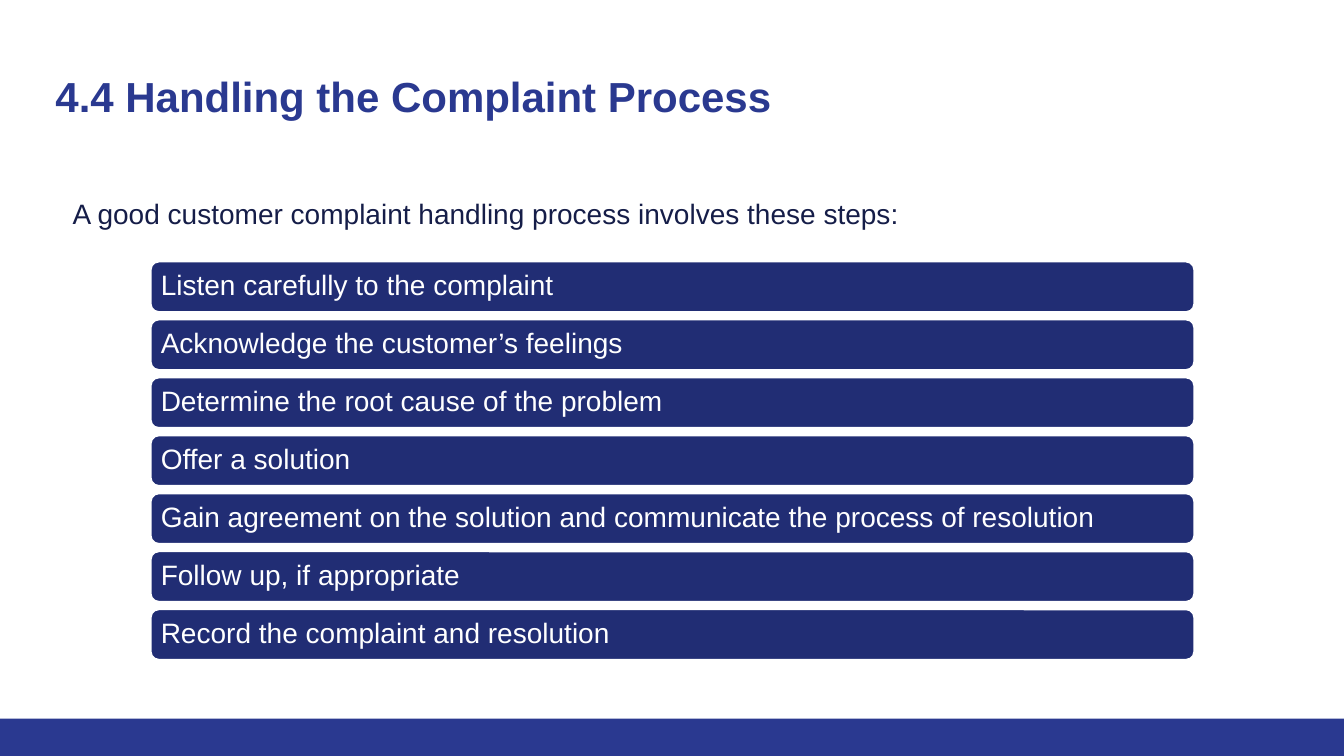
from pptx import Presentation
from pptx.dml.color import RGBColor
from pptx.enum.shapes import MSO_SHAPE as SHAPE
from pptx.enum.text import MSO_ANCHOR as ANCHOR, MSO_AUTO_SIZE as FIT, PP_ALIGN as ALIGN
from pptx.oxml.xmlchemy import OxmlElement
from pptx.util import Inches, Pt

TITLE = "4.4 Handling the Complaint Process"
INTRO = "A good customer complaint handling process involves these steps:"
STEPS = [
    "Listen carefully to the complaint",
    "Acknowledge the customer’s feelings",
    "Determine the root cause of the problem",
    "Offer a solution",
    "Gain agreement on the solution and communicate the process of resolution",
    "Follow up, if appropriate",
    "Record the complaint and resolution",
]
COLORS = {"brand": "2A3990", "text": "151D48", "bar": "212D74", "white": "FFFFFF"}
FONT = "Arial"
BAR_LEFT, BAR_TOP, BAR_WIDTH, BAR_HEIGHT = 1.49, 2.59, 10.36, 0.51
BAR_PITCH = 0.575


def rgb(name):
    return RGBColor.from_string(COLORS[name])


def place(sp, left, top, width, height):
    sp.left, sp.top = Inches(left), Inches(top)
    sp.width, sp.height = Inches(width), Inches(height)


def set_text(sp, text, size, color, inset, anchor, spacing, bold=False):
    tf = sp.text_frame
    tf.text = text
    tf.word_wrap = True
    tf.auto_size = FIT.NONE
    tf.vertical_anchor = anchor
    tf.margin_left = tf.margin_right = Inches(inset)
    tf.margin_top = tf.margin_bottom = Inches(inset)
    p = tf.paragraphs[0]
    p.alignment = ALIGN.LEFT
    p.line_spacing = spacing
    p.space_before = Pt(0)
    font = p.runs[0].font
    font.name, font.size, font.bold = FONT, Pt(size), bold
    font.color.rgb = rgb(color)
    return p


def add_box(shapes, kind, left, top, width, height, fill):
    sp = shapes.add_shape(kind, Inches(left), Inches(top), Inches(width), Inches(height))
    sp.shadow.inherit = False
    sp.fill.solid()
    sp.fill.fore_color.rgb = rgb(fill)
    return sp


def main():
    prs = Presentation()
    prs.slide_width, prs.slide_height = Inches(13.33), Inches(7.5)
    s = prs.slides.add_slide(prs.slide_layouts[1])

    footer = add_box(s.shapes, SHAPE.RECTANGLE, 0, 7.13, 13.33, 0.37, "brand")
    footer.line.fill.background()

    title, body = s.shapes.title, s.placeholders[1]
    place(title, 0.45, 0.6, 12.42, 0.89)
    set_text(title, TITLE, 30, "brand", 0.1, ANCHOR.TOP, 1.0, bold=True)

    place(body, 0.45, 1.8, 12.42, 5.11)
    p = set_text(body, INTRO, 20, "text", 0.1, ANCHOR.TOP, 1.15)
    pPr = p._p.get_or_add_pPr()
    pPr.set("marL", str(Inches(0.17)))
    pPr.set("indent", "0")
    pPr.append(OxmlElement("a:buNone"))

    steps = s.shapes.add_group_shape()
    for i, step in enumerate(STEPS):
        top = BAR_TOP + i * BAR_PITCH
        bar = add_box(steps.shapes, SHAPE.ROUNDED_RECTANGLE,
                      BAR_LEFT, top, BAR_WIDTH, BAR_HEIGHT, "bar")
        bar.line.color.rgb = rgb("white")
        bar.line.width = Pt(2)
        set_text(bar, step, 20, "white", 0.08, ANCHOR.MIDDLE, 0.9)

    prs.save("out.pptx")


if __name__ == "__main__":
    main()
